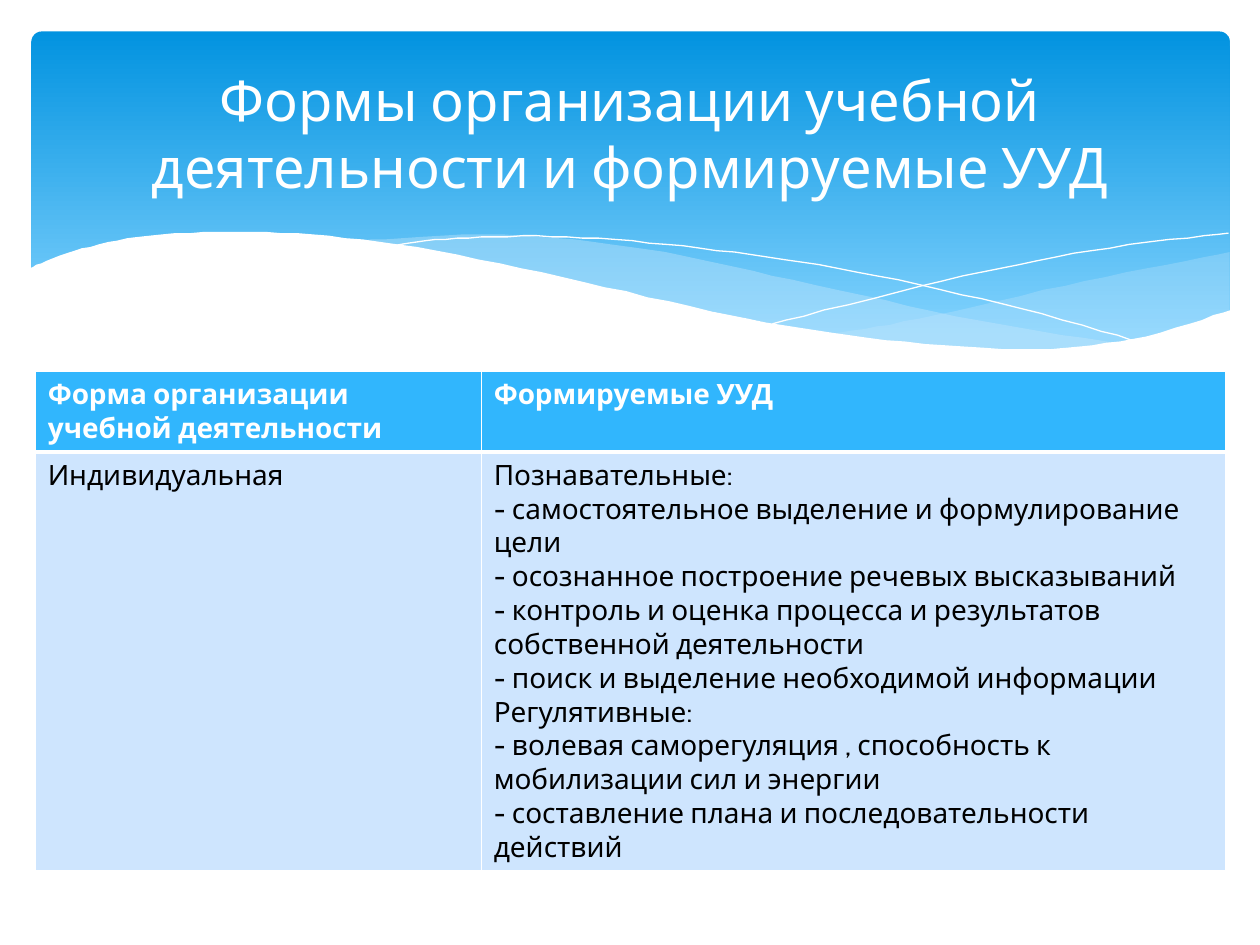
from dataclasses import dataclass

from lxml import etree
from pptx import Presentation
from pptx.dml.color import RGBColor
from pptx.enum.shapes import MSO_SHAPE
from pptx.enum.text import MSO_ANCHOR, MSO_AUTO_SIZE, PP_ALIGN
from pptx.oxml.ns import qn
from pptx.util import Emu, Pt

ROUND = MSO_SHAPE.ROUNDED_RECTANGLE
MIDDLE = MSO_ANCHOR.MIDDLE
FIXED = MSO_AUTO_SIZE.NONE
LEFT, CENTER = PP_ALIGN.LEFT, PP_ALIGN.CENTER

SCALE = 9144  # EMU per px, 100 px to the inch
STEPS = 8  # short lines between two knots of a curve
FONT = "Cabin"
WHITE, BLACK, PALE = "FFFFFF", "000000", "C6E7FC"

Point = tuple[float, float]


@dataclass
class Wave:
    """Curves and straight corners, joined end to end."""
    curves: list[list[Point]]
    fill: str | None = None
    alpha: int = 100


@dataclass
class Row:
    height: int
    fill: str
    color: str
    bold: bool
    edges: dict[str, int]
    cells: list[str]


WAVES = [
    Wave([[(976, 200), (861, 223), (729, 253), (661, 265)],
          [(661, 265), (745, 275), (824, 278), (905, 269), (976, 247)]], PALE, 29),
    Wave([[(893, 273), (775, 254), (629, 222), (514, 198), (399, 186), (286, 191)],
          [(286, 191), (383, 207), (530, 240), (665, 266), (785, 278), (893, 273)]],
         PALE, 40),
    Wave([[(309, 195), (363, 189), (450, 188), (556, 197), (665, 213),
           (795, 241), (907, 272)]]),
    Wave([[(613, 257), (748, 223), (866, 199), (975, 185)]]),
    Wave([[(977, 246), (899, 269), (809, 277), (688, 268), (579, 250), (447, 220),
           (316, 194), (211, 184), (119, 187), (59, 199), (23, 213)],
          [(23, 329), (977, 329)]], WHITE),
]

HEAD = Row(63, "31B6FD", WHITE, True, {"L": 1, "R": 1, "T": 1, "B": 3},
           ["Форма организации учебной деятельности", "Формируемые УУД"])
BODY = Row(277, "CEE5FE", BLACK, False, {"L": 1, "R": 1, "T": 3, "B": 1},
           ["Индивидуальная",
            "Познавательные:\n"
            "- самостоятельное выделение и формулирование цели\n"
            "- осознанное построение речевых высказываний\n"
            "- контроль и оценка процесса и результатов собственной деятельности\n"
            "- поиск и выделение необходимой информации\n"
            "Регулятивные:\n"
            "- волевая саморегуляция , способность к мобилизации сил и энергии\n"
            "- составление плана и последовательности действий"])


def px(n: int) -> Emu:
    return Emu(n * SCALE)


def rgb(code: str) -> RGBColor:
    return RGBColor.from_string(code)


def bend(knots: list[Point]) -> list[Point]:
    """Run a Catmull-Rom curve through the knots."""
    if len(knots) < 3:
        return knots
    ends = [knots[0], *knots, knots[-1]]
    points = [knots[0]]
    for four in zip(ends, ends[1:], ends[2:], ends[3:]):
        for step in range(1, STEPS + 1):
            t = step / STEPS
            points.append(tuple(
                b + t * (c - a + t * (2 * a - 5 * b + 4 * c - d
                                      + t * (3 * b - a - 3 * c + d))) / 2
                for a, b, c, d in zip(*four)))
    return points


def write(frame, text: str, *, size: int, color: str, bold=False, align=LEFT) -> None:
    frame.text = text
    for para in frame.paragraphs:
        para.alignment = align
        font = para.runs[0].font
        font.name, font.size, font.bold = FONT, Pt(size), bold
        font.color.rgb = rgb(color)


def draw_panel(slide) -> None:
    panel = slide.shapes.add_shape(ROUND, px(25), px(25), px(951), px(270))
    panel.adjustments[0] = 0.03
    panel.shadow.inherit = False
    panel.line.fill.background()
    panel.fill.gradient()
    panel.fill.gradient_angle = 270
    stops = [(0, "0293E0"), (0.9, "83D3FE")]
    for stop, (place, color) in zip(panel.fill.gradient_stops, stops):
        stop.position = place
        stop.color.rgb = rgb(color)


def draw_wave(slide, wave: Wave) -> None:
    """Draw a filled area, or a white hairline when there is no fill."""
    points = [point for curve in wave.curves for point in bend(curve)]
    pen = slide.shapes.build_freeform(*points[0], scale=SCALE)
    pen.add_line_segments(points[1:], close=wave.fill is not None)
    shape = pen.convert_to_shape()
    shape.shadow.inherit = False
    if wave.fill is None:
        shape.fill.background()
        shape.line.color.rgb = rgb(WHITE)
        shape.line.width = Pt(0)
        return
    shape.line.fill.background()
    shape.fill.solid()
    shape.fill.fore_color.rgb = rgb(wave.fill)
    if wave.alpha < 100:
        tint = shape.element.spPr.find(qn("a:solidFill")).find(qn("a:srgbClr"))
        etree.SubElement(tint, qn("a:alpha"), val=str(wave.alpha * 1000))


def add_edges(cell, edges: dict[str, int]) -> None:
    props = cell._tc.get_or_add_tcPr()
    for side, width in edges.items():
        line = etree.SubElement(props, qn(f"a:ln{side}"), w=str(int(Pt(width))))
        fill = etree.SubElement(line, qn("a:solidFill"))
        etree.SubElement(fill, qn("a:srgbClr"), val=WHITE)


def draw_table(slide, rows: list[Row], widths: list[int]) -> None:
    high = sum(row.height for row in rows)
    table = slide.shapes.add_table(len(rows), len(widths), px(28), px(295),
                                   px(sum(widths)), px(high)).table
    table.horz_banding = False
    for col, width in zip(table.columns, widths):
        col.width = px(width)
    for line, row in zip(table.rows, rows):
        line.height = px(row.height)
        for cell, text in zip(line.cells, row.cells):
            add_edges(cell, row.edges)
            cell.fill.solid()
            cell.fill.fore_color.rgb = rgb(row.fill)
            write(cell.text_frame, text, size=16, color=row.color, bold=row.bold)


def place_title(slide, text: str) -> None:
    """Fill the title and bring it in front of the panel."""
    title = slide.shapes.title
    title.left, title.top, title.width, title.height = map(px, (50, 37, 900, 137))
    frame = title.text_frame
    frame.word_wrap, frame.auto_size = True, FIXED
    frame.vertical_anchor = MIDDLE
    write(frame, text, size=32, color=WHITE, align=CENTER)
    slide.shapes.element.append(title.element)


def main() -> None:
    deck = Presentation()
    deck.slide_width, deck.slide_height = px(1000), px(750)
    slide = deck.slides.add_slide(deck.slide_layouts[5])
    draw_panel(slide)
    for wave in WAVES:
        draw_wave(slide, wave)
    draw_table(slide, [HEAD, BODY], [354, 591])
    place_title(slide, "Формы организации учебной деятельности и формируемые УУД")
    deck.save("out.pptx")


if __name__ == "__main__":
    main()
